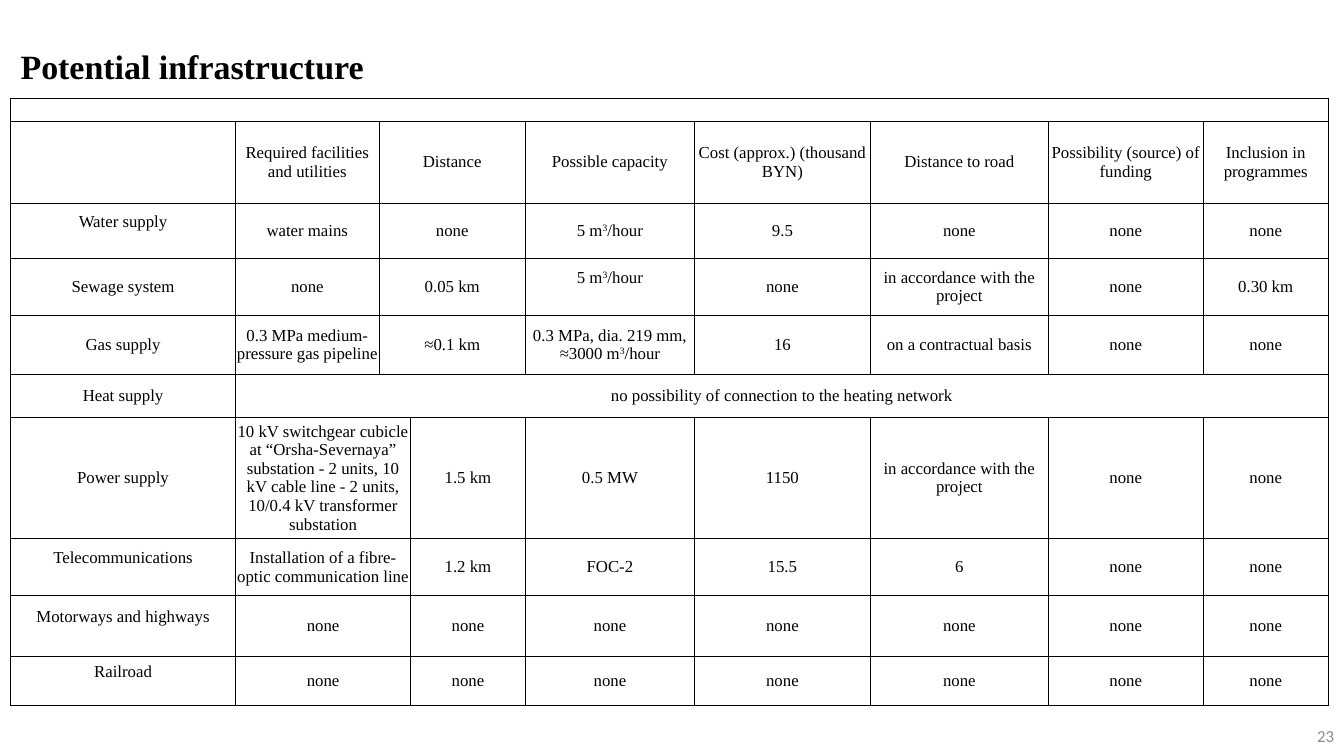
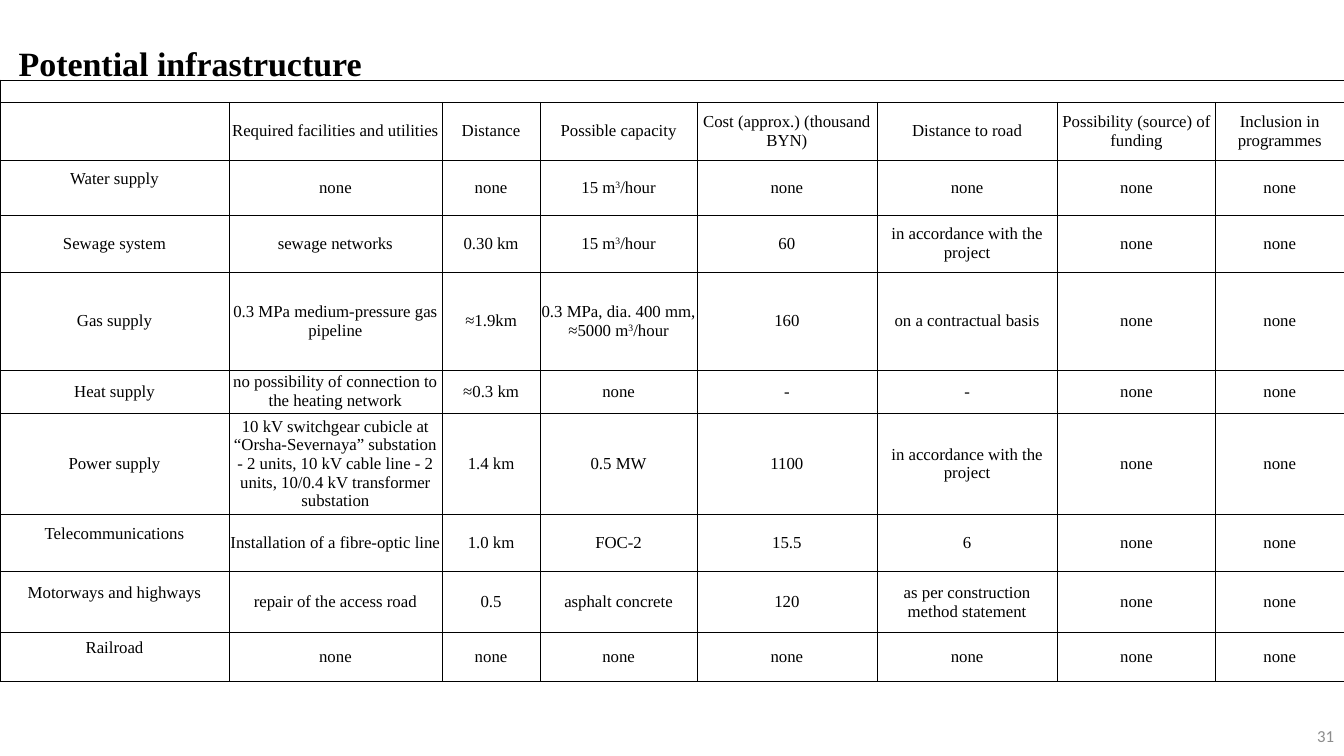
from lxml import etree
from pptx import Presentation
from pptx.dml.color import RGBColor
from pptx.enum.text import MSO_ANCHOR, PP_ALIGN
from pptx.oxml.ns import qn
from pptx.util import Pt

TOP, MIDDLE = MSO_ANCHOR.TOP, MSO_ANCHOR.MIDDLE
LEFT, CENTER, RIGHT = PP_ALIGN.LEFT, PP_ALIGN.CENTER, PP_ALIGN.RIGHT

COLORS = {"ink": "000000", "muted": "8C8C8C"}
SERIF, SANS = "Times New Roman", "Calibri"
BODY = 12
BORDER = 0.25
INSET = 0.5
LIFT = 13


def write(tf, text, size=BODY, font=SERIF, color="ink", bold=False,
          align=LEFT, spacing=None):
    p = tf.paragraphs[0]
    p.alignment = align
    if spacing:
        p.line_spacing = spacing
    for i, part in enumerate(text.split("^")):
        if not part:
            continue
        r = p.add_run()
        r.text = part
        r.font.size = Pt(size)
        r.font.name = font
        r.font.bold = bold
        r.font.color.rgb = RGBColor.from_string(COLORS[color])
        if i % 2:
            r.font._element.set("baseline", "30000")
    end = etree.SubElement(p._p, qn("a:endParaRPr"), sz=str(round(size * 100)))
    etree.SubElement(end, qn("a:latin"), typeface=font)


class Deck:
    def __init__(self):
        self.prs = Presentation()
        self.prs.slide_width, self.prs.slide_height = Pt(960), Pt(540)
        self.s = None

    def slide(self, number):
        self.s = self.prs.slides.add_slide(self.prs.slide_layouts[6])
        self.text(str(number), 744, 511, 216, 29, font=SANS, color="muted", align=RIGHT)

    def text(self, text, x, y, w, h, anchor=MIDDLE, **style):
        tf = self.s.shapes.add_textbox(Pt(x), Pt(y), Pt(w), Pt(h)).text_frame
        tf.word_wrap = True
        tf.vertical_anchor = anchor
        if anchor == TOP:
            tf.margin_top = 0
        write(tf, text, **style)

    def title(self, text, x, y):
        self.text(text, x, y, 868, 48, anchor=TOP, size=24.3, bold=True, spacing=0.9)

    def cell(self, cell, text, lifted):
        cell.margin_left = cell.margin_right = cell.margin_top = Pt(INSET)
        cell.margin_bottom = Pt(LIFT if lifted else 0)
        cell.vertical_anchor = MIDDLE
        tcPr = cell._tc.get_or_add_tcPr()
        for side in "LRTB":
            ln = etree.SubElement(tcPr, qn("a:ln" + side), w=str(Pt(BORDER)))
            fill = etree.SubElement(ln, qn("a:solidFill"))
            etree.SubElement(fill, qn("a:srgbClr"), val=COLORS["ink"])
        cell.fill.background()
        write(cell.text_frame, text, align=CENTER)

    def table(self, x, y, widths, heights, rows, lifted):
        tbl = self.s.shapes.add_table(
            len(rows), len(widths), Pt(x), Pt(y), Pt(sum(widths)), Pt(sum(heights))).table
        tbl.first_row = tbl.horz_banding = False
        for col, w in zip(tbl.columns, widths):
            col.width = Pt(w)
        for row, h in zip(tbl.rows, heights):
            row.height = Pt(h)
        for i, row in enumerate(rows):
            for j, text in enumerate(row):
                self.cell(tbl.cell(i, j), text or "", (i, j) in lifted)
            for j, text in enumerate(row):
                if text is None:
                    continue
                end = j
                while end + 1 < len(row) and row[end + 1] is None:
                    end += 1
                if end > j:
                    tbl.cell(i, j).merge(tbl.cell(i, end))


SPAN = None
NONE = "none"
TITLE = "Potential infrastructure"
LABELS = ["", "Water supply", "Sewage system", "Gas supply", "Heat supply",
          "Power supply", "Telecommunications", "Motorways and highways", "Railroad"]
FACILITIES = "Required facilities and utilities"
HEADINGS = ["Possible capacity", "Cost (approx.) (thousand BYN)", "Distance to road",
            "Possibility (source) of funding", "Inclusion in programmes"]
PROJECT = "in accordance with the project"
CONTRACT = "on a contractual basis"
PIPELINE = "0.3 MPa medium-pressure gas pipeline"
NO_HEAT = "no possibility of connection to the heating network"
SWITCHGEAR = ("10 kV switchgear cubicle at “Orsha-Severnaya” substation - 2 units, "
              "10 kV cable line - 2 units, 10/0.4 kV transformer substation")
LIFTED = {(1 + LABELS.index(name), 0) for name in
          ("Water supply", "Telecommunications", "Motorways and highways", "Railroad")}

SITES = [
    {
        "number": 23, "title": (7.6, 35.9), "table": (7.6, 70),
        "widths": [160.7, 102.5, 22.5, 82.1, 120.7, 125.7, 127.1, 110.7, 89.3],
        "heights": [16.4, 58.6, 39.3, 40.7, 42.1, 30.7, 80.7, 40.7, 43.6, 35],
        "lifted": LIFTED | {(3, 4)},
        "values": [
            [FACILITIES, "Distance", SPAN] + HEADINGS,
            ["water mains", NONE, SPAN, "5 m^3^/hour", "9.5", NONE, NONE, NONE],
            [NONE, "0.05 km", SPAN, "5 m^3^/hour", NONE, PROJECT, NONE, "0.30 km"],
            [PIPELINE, "≈0.1 km", SPAN, "0.3 MPa, dia. 219 mm, ≈3000 m^3^/hour",
             "16", CONTRACT, NONE, NONE],
            [NO_HEAT] + [SPAN] * 7,
            [SWITCHGEAR, SPAN, "1.5 km", "0.5 MW", "1150", PROJECT, NONE, NONE],
            ["Installation of a fibre-optic communication line", SPAN, "1.2 km",
             "FOC-2", "15.5", "6", NONE, NONE],
            [NONE, SPAN] + [NONE] * 6,
            [NONE, SPAN] + [NONE] * 6,
        ],
    },
    {
        "number": 31, "title": (6.2, 33.6), "table": (0, 57),
        "widths": [163.6, 152, 70.4, 111.8, 128.6, 129, 113, 91.6],
        "heights": [15.8, 41.4, 39.3, 40.7, 70, 30.7, 67.1, 40.7, 43.6, 35],
        "lifted": LIFTED,
        "values": [
            [FACILITIES, "Distance"] + HEADINGS,
            [NONE, NONE, "15 m^3^/hour"] + [NONE] * 4,
            ["sewage networks", "0.30 km", "15 m^3^/hour", "60", PROJECT, NONE, NONE],
            [PIPELINE, "≈1.9km", "0.3 MPa, dia. 400 mm, ≈5000 m^3^/hour",
             "160", CONTRACT, NONE, NONE],
            [NO_HEAT, "≈0.3 km", NONE, "-", "-", NONE, NONE],
            [SWITCHGEAR, "1.4 km", "0.5 MW", "1100", PROJECT, NONE, NONE],
            ["Installation of a fibre-optic line", "1.0 km", "FOC-2", "15.5", "6",
             NONE, NONE],
            ["repair of the access road", "0.5", "asphalt concrete", "120",
             "as per construction method statement", NONE, NONE],
            [NONE] * 7,
        ],
    },
]


def main():
    deck = Deck()
    for site in SITES:
        widths = site["widths"]
        rows = [[""] + [SPAN] * (len(widths) - 1)]
        rows += [[label] + values for label, values in zip(LABELS, site["values"])]
        deck.slide(site["number"])
        deck.title(TITLE, *site["title"])
        deck.table(*site["table"], widths, site["heights"], rows, site["lifted"])
    deck.prs.save("out.pptx")


if __name__ == "__main__":
    main()
